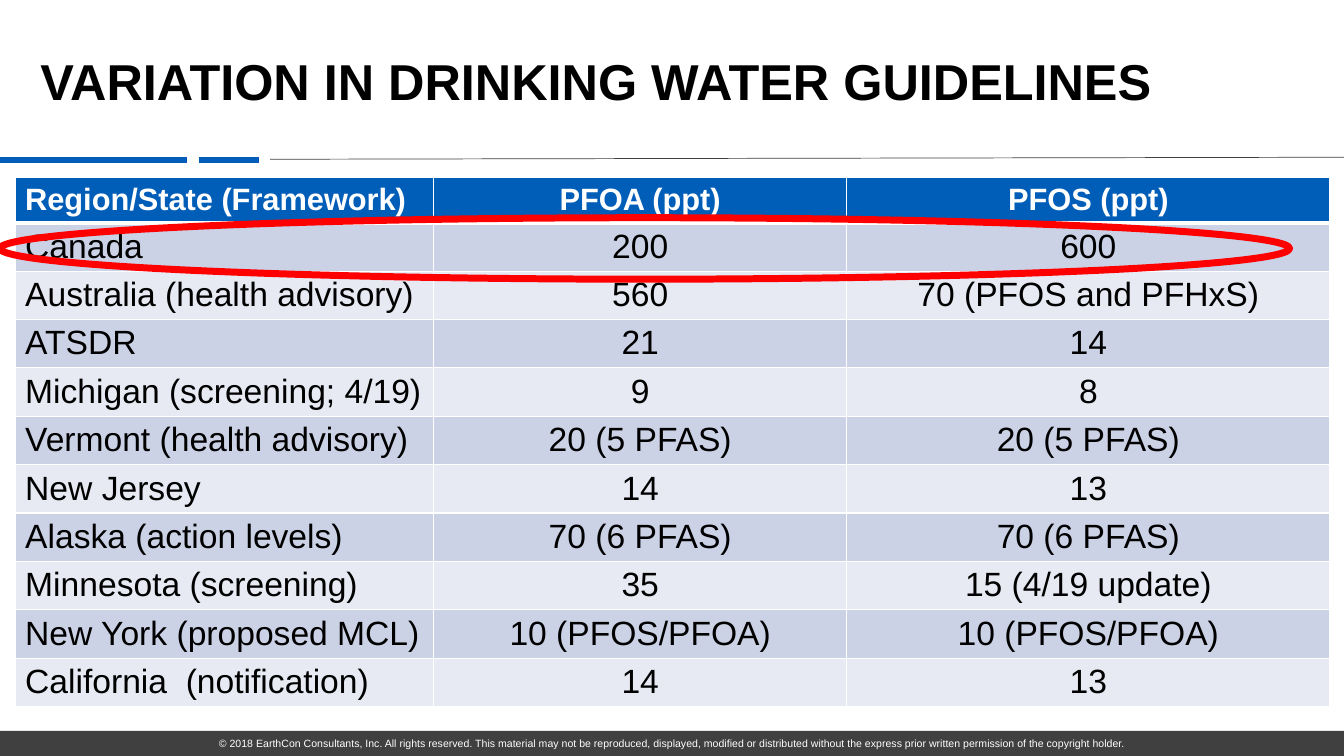
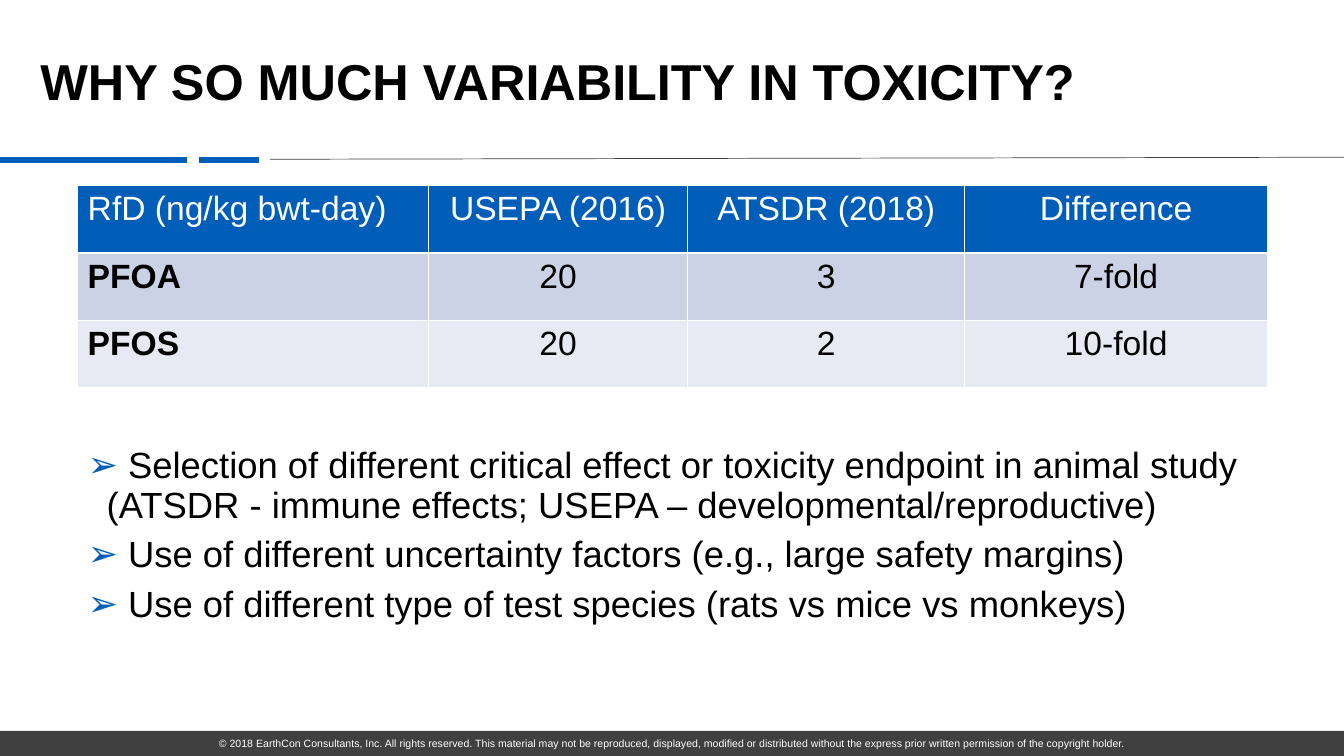
from lxml.etree import SubElement
from pptx import Presentation
from pptx.dml.color import RGBColor
from pptx.enum.shapes import MSO_CONNECTOR, MSO_SHAPE
from pptx.enum.text import MSO_ANCHOR, MSO_AUTO_SIZE, PP_ALIGN
from pptx.oxml.ns import qn
from pptx.util import Inches, Pt

BLUE = RGBColor(0x00, 0x5E, 0xB8)
GREY = RGBColor(0x40, 0x40, 0x40)
BLACK = RGBColor(0x00, 0x00, 0x00)
WHITE = RGBColor(0xFF, 0xFF, 0xFF)
RED = RGBColor(0xFF, 0x00, 0x00)
BANDS = (RGBColor(0xCC, 0xD2, 0xE6), RGBColor(0xE7, 0xEA, 0xF3))
FONT = "Arial"
SLIDE_W, SLIDE_H = 13.33, 7.5
FOOTER_H = 0.25
COPYRIGHT = (
    "© 2018 EarthCon Consultants, Inc. All rights reserved. This material may not be "
    "reproduced, displayed, modified or distributed without the express prior written "
    "permission of the copyright holder."
)
RULES = (
    (0, 1.59, 1.85, 1.59, BLUE, 4.5),
    (1.97, 1.59, 2.57, 1.59, BLUE, 4.5),
    (2.68, 1.58, SLIDE_W, 1.56, GREY, 0.5),
)
GUIDELINES = (
    ("Region/State (Framework)", "PFOA (ppt)", "PFOS (ppt)"),
    ("Canada", "200", "600"),
    ("Australia (health advisory)", "560", "70 (PFOS and PFHxS)"),
    ("ATSDR", "21", "14"),
    ("Michigan (screening; 4/19)", "9", "8"),
    ("Vermont (health advisory)", "20 (5 PFAS)", "20 (5 PFAS)"),
    ("New Jersey", "14", "13"),
    ("Alaska (action levels)", "70 (6 PFAS)", "70 (6 PFAS)"),
    ("Minnesota (screening)", "35", "15 (4/19 update)"),
    ("New York (proposed MCL)", "10 (PFOS/PFOA)", "10 (PFOS/PFOA)"),
    ("California  (notification)", "14", "13"),
)
REFERENCE_DOSES = (
    ("RfD (ng/kg bwt-day)", "USEPA (2016)", "ATSDR (2018)", "Difference"),
    ("PFOA", "20", "3", "7-fold"),
    ("PFOS", "20", "2", "10-fold"),
)
REASONS = (
    " Selection of different critical effect or toxicity endpoint in animal study "
    "(ATSDR - immune effects; USEPA – developmental/reproductive)",
    " Use of different uncertainty factors (e.g., large safety margins)",
    " Use of different type of test species (rats vs mice vs monkeys)",
)


def box(left, top, width, height):
    return Inches(left), Inches(top), Inches(width), Inches(height)


def style_text(p, size, color, bold=False, align=PP_ALIGN.LEFT):
    p.alignment = align
    for r in p.runs:
        r.font.name = FONT
        r.font.size = Pt(size)
        r.font.bold = bold
        r.font.color.rgb = color


def add_rule(s, x1, y1, x2, y2, color, width):
    rule = s.shapes.add_connector(
        MSO_CONNECTOR.STRAIGHT, Inches(x1), Inches(y1), Inches(x2), Inches(y2)
    )
    rule.line.color.rgb = color
    rule.line.width = Pt(width)
    SubElement(rule._element.spPr, qn("a:effectLst"))


def add_footer(s):
    sp = s.shapes.add_shape(
        MSO_SHAPE.RECTANGLE, *box(0, SLIDE_H - FOOTER_H, SLIDE_W, FOOTER_H)
    )
    sp.shadow.inherit = False
    sp.fill.solid()
    sp.fill.fore_color.rgb = GREY
    sp.line.fill.background()
    tf = sp.text_frame
    tf.word_wrap = True
    tf.vertical_anchor = MSO_ANCHOR.MIDDLE
    tf.text = COPYRIGHT
    style_text(tf.paragraphs[0], 7.5, WHITE, align=PP_ALIGN.CENTER)


def set_title(s, text):
    title = s.shapes.title
    title.left, title.top, title.width, title.height = box(0.4, 0.27, 12.54, 1.13)
    tf = title.text_frame
    tf.text = text
    tf.word_wrap = True
    tf.auto_size = MSO_AUTO_SIZE.NONE
    tf.vertical_anchor = MSO_ANCHOR.MIDDLE
    tf.margin_left = tf.margin_top = tf.margin_right = tf.margin_bottom = 0
    p = tf.paragraphs[0]
    p.line_spacing = 0.9
    style_text(p, 36, BLACK, bold=True)


def add_slide(prs, title):
    s = prs.slides.add_slide(prs.slide_layouts[5])
    add_footer(s)
    for rule in RULES:
        add_rule(s, *rule)
    set_title(s, title)
    return s


def set_borders(cell, widths):
    tc_pr = cell._tc.get_or_add_tcPr()
    for i, (side, width) in enumerate(zip("LRTB", widths)):
        ln = SubElement(tc_pr, qn(f"a:ln{side}"), w=str(Pt(width)))
        fill = SubElement(ln, qn("a:solidFill"))
        SubElement(fill, qn("a:srgbClr"), val=str(WHITE))
        tc_pr.insert(i, ln)


def add_data_table(s, rows, left, top, col_widths, row_heights, header_size=24,
                   header_bold=False, header_rule=1, label_bold=False):
    table = s.shapes.add_table(
        len(rows), len(col_widths),
        *box(left, top, sum(col_widths), sum(row_heights))
    ).table
    for column, width in zip(table.columns, col_widths):
        column.width = Inches(width)
    for i, (values, height) in enumerate(zip(rows, row_heights)):
        header = i == 0
        table.rows[i].height = Inches(height)
        for j, value in enumerate(values):
            cell = table.cell(i, j)
            cell.text = value
            cell.fill.solid()
            cell.fill.fore_color.rgb = BLUE if header else BANDS[(i - 1) % 2]
            set_borders(cell, (1, 1, header_rule if i == 1 else 1,
                               header_rule if header else 1))
            style_text(
                cell.text_frame.paragraphs[0],
                header_size if header else 24,
                WHITE if header else BLACK,
                header_bold if header else label_bold and j == 0,
                PP_ALIGN.CENTER if j else PP_ALIGN.LEFT,
            )


def add_highlight(s, left, top, width, height):
    sp = s.shapes.add_shape(MSO_SHAPE.OVAL, *box(left, top, width, height))
    sp.shadow.inherit = False
    sp.fill.background()
    sp.line.color.rgb = RED
    sp.line.width = Pt(5)


def set_bullet(p):
    p_pr = p._p.get_or_add_pPr()
    p_pr.set("marL", str(Inches(0.19)))
    p_pr.set("indent", str(-Inches(0.19)))
    color = SubElement(p_pr, qn("a:buClr"))
    SubElement(color, qn("a:srgbClr"), val=str(BLUE))
    SubElement(p_pr, qn("a:buFont"), typeface=FONT)
    SubElement(p_pr, qn("a:buChar"), char="➢")


def add_bullets(s, items, left, top, width, height):
    tf = s.shapes.add_textbox(*box(left, top, width, height)).text_frame
    tf.word_wrap = True
    for i, item in enumerate(items):
        p = tf.add_paragraph() if i else tf.paragraphs[0]
        p.text = item
        set_bullet(p)
        p.line_spacing = 0.9
        if i:
            p.space_before = Pt(7.5)
        style_text(p, 26, BLACK)


def main():
    prs = Presentation()
    prs.slide_width, prs.slide_height = Inches(SLIDE_W), Inches(SLIDE_H)

    s = add_slide(prs, "VARIATION IN DRINKING WATER GUIDELINES")
    heights = [0.45] + [0.48] * (len(GUIDELINES) - 1)
    add_data_table(s, GUIDELINES, 0.15, 1.76, (4.15, 4.1, 4.79), heights,
                   header_size=22, header_bold=True, header_rule=3)
    add_highlight(s, 0, 2.16, 12.79, 0.61)

    s = add_slide(prs, "WHY SO MUCH VARIABILITY IN TOXICITY?")
    add_bullets(s, REASONS, 0.77, 4.39, 11.67, 2)
    add_data_table(s, REFERENCE_DOSES, 0.77, 1.84, (3.48, 2.57, 2.75, 3),
                   [0.67] * len(REFERENCE_DOSES), label_bold=True)

    prs.save("out.pptx")


if __name__ == "__main__":
    main()
